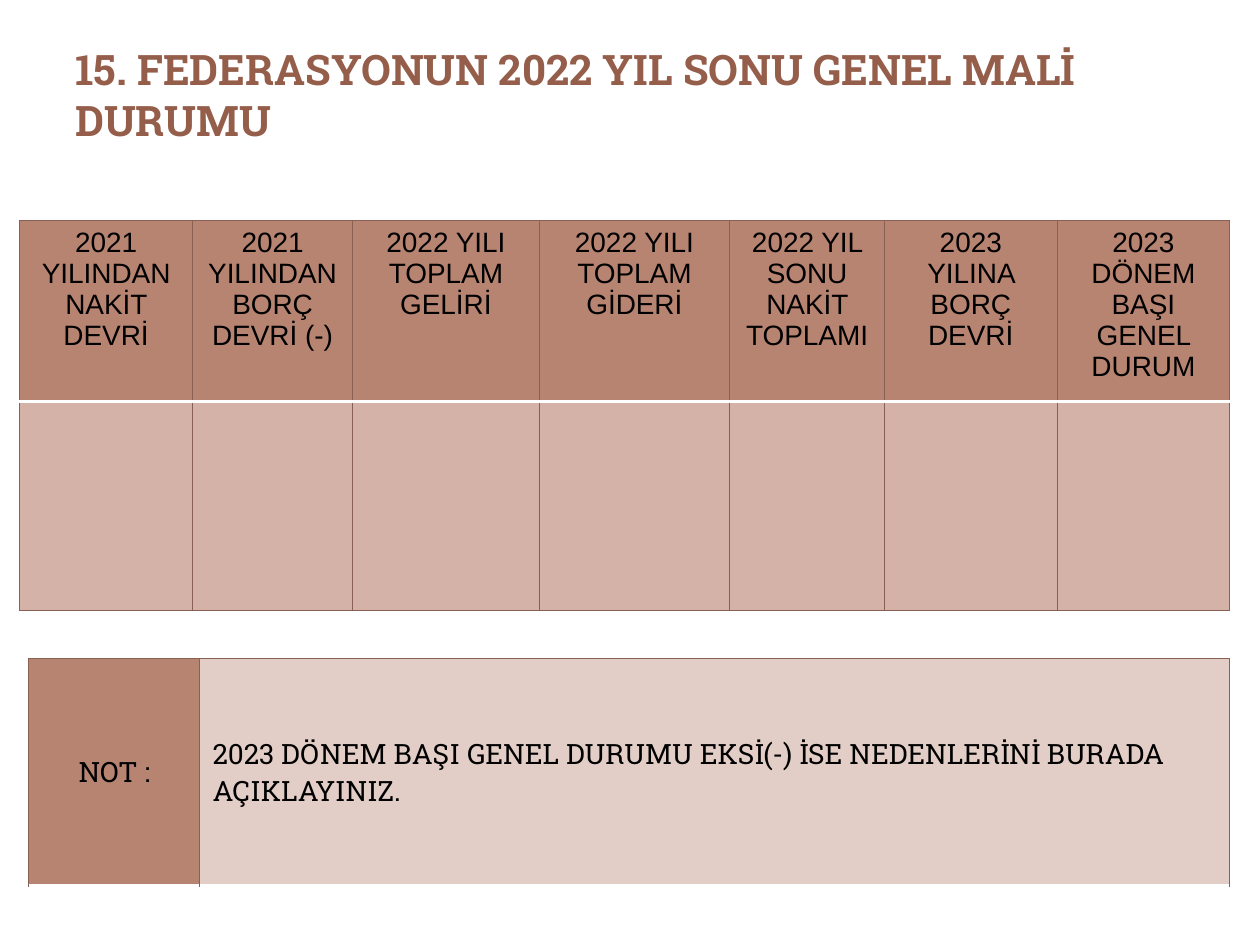
from dataclasses import dataclass

from lxml import etree
from pptx import Presentation
from pptx.dml.color import RGBColor
from pptx.enum.text import MSO_ANCHOR, PP_ALIGN
from pptx.oxml.ns import qn
from pptx.util import Cm, Pt

LEFT, CENTER = PP_ALIGN.LEFT, PP_ALIGN.CENTER
TOP, MIDDLE = MSO_ANCHOR.TOP, MSO_ANCHOR.MIDDLE


@dataclass(frozen=True)
class Theme:
    title: str = "955E4B"
    text: str = "000000"
    head: str = "B88472"
    body: str = "D4B2A8"
    note: str = "E3CEC7"
    edge: tuple = ("896154", 0.75)
    rule: tuple = ("FFFFFF", 2)
    slab: str = "Roboto Slab"
    sans: str = "Arial"
    big: int = 24
    small: int = 16


class Deck:
    def __init__(self, theme):
        self.theme = theme
        self.prs = Presentation()
        self.prs.slide_width, self.prs.slide_height = Cm(25.4), Cm(19.05)
        self.slide = self.prs.slides.add_slide(self.prs.slide_layouts[6])

    def label(self, frame, text, font, size, color, align=LEFT, bold=False):
        frame.word_wrap = True
        par = frame.paragraphs[0]
        par.alignment = align
        run = par.add_run()
        run.text = text
        style = {"name": font, "size": Pt(size), "bold": bold}
        for key, value in style.items():
            setattr(run.font, key, value)
        run.font.color.rgb = RGBColor.from_string(color)

    def title(self, text, *box):
        frame = self.slide.shapes.add_textbox(*map(Cm, box)).text_frame
        th = self.theme
        self.label(frame, text, th.slab, th.big, th.title, bold=True)

    def table(self, left, top, widths, heights):
        shape = self.slide.shapes.add_table(
            len(heights), len(widths), Cm(left), Cm(top),
            Cm(sum(widths)), Cm(sum(heights)))
        grid = shape.table
        for key in ("first_row", "horz_banding"):
            setattr(grid, key, False)
        for col, width in zip(grid.columns, widths):
            col.width = Cm(width)
        for row, height in zip(grid.rows, heights):
            row.height = Cm(height)
        return grid

    def cell(self, cell, fill, text="", font=None, align=CENTER,
             anchor=TOP, **rules):
        """Style one cell; rules maps a side (L, R, T, B) to its line."""
        props = cell._tc.get_or_add_tcPr()
        for side in "LRTB":
            color, width = rules.get(side, self.theme.edge)
            line = etree.SubElement(props, qn(f"a:ln{side}"), w=str(Pt(width)))
            solid = etree.SubElement(line, qn("a:solidFill"))
            etree.SubElement(solid, qn("a:srgbClr"), val=color)
        cell.fill.solid()
        cell.fill.fore_color.rgb = RGBColor.from_string(fill)
        cell.vertical_anchor = anchor
        if text:
            self.label(cell.text_frame, text, font, self.theme.small,
                       self.theme.text, align)


def main():
    th = Theme()
    deck = Deck(th)
    deck.title("15. FEDERASYONUN 2022 YIL SONU GENEL MALİ DURUMU",
               1.27, 0.76, 22.86, 3.18)

    heads = {
        "2021 YILINDAN NAKİT DEVRİ": 3.48,
        "2021 YILINDAN BORÇ DEVRİ (-)": 3.23,
        "2022 YILI TOPLAM GELİRİ": 3.76,
        "2022 YILI TOPLAM GİDERİ": 3.84,
        "2022 YIL SONU NAKİT TOPLAMI": 3.12,
        "2023 YILINA BORÇ DEVRİ": 3.48,
        "2023 DÖNEM BAŞI GENEL DURUM": 3.48,
    }
    funds = deck.table(0.4, 4.45, list(heads.values()), [3.5, 4.22])
    for col, text in enumerate(heads):
        deck.cell(funds.cell(0, col), th.head, text, th.sans, B=th.rule)
        deck.cell(funds.cell(1, col), th.body, T=th.rule)

    note = deck.table(0.58, 13.28, [3.45, 20.75], [4.57])
    parts = [
        (th.head, "NOT :", CENTER),
        (th.note, "2023 DÖNEM BAŞI GENEL DURUMU EKSİ(-) İSE "
                  "NEDENLERİNİ BURADA AÇIKLAYINIZ.", LEFT),
    ]
    for col, (fill, text, align) in enumerate(parts):
        deck.cell(note.cell(0, col), fill, text, th.slab, align, MIDDLE,
                  B=th.rule)
    deck.prs.save("out.pptx")


if __name__ == "__main__":
    main()
